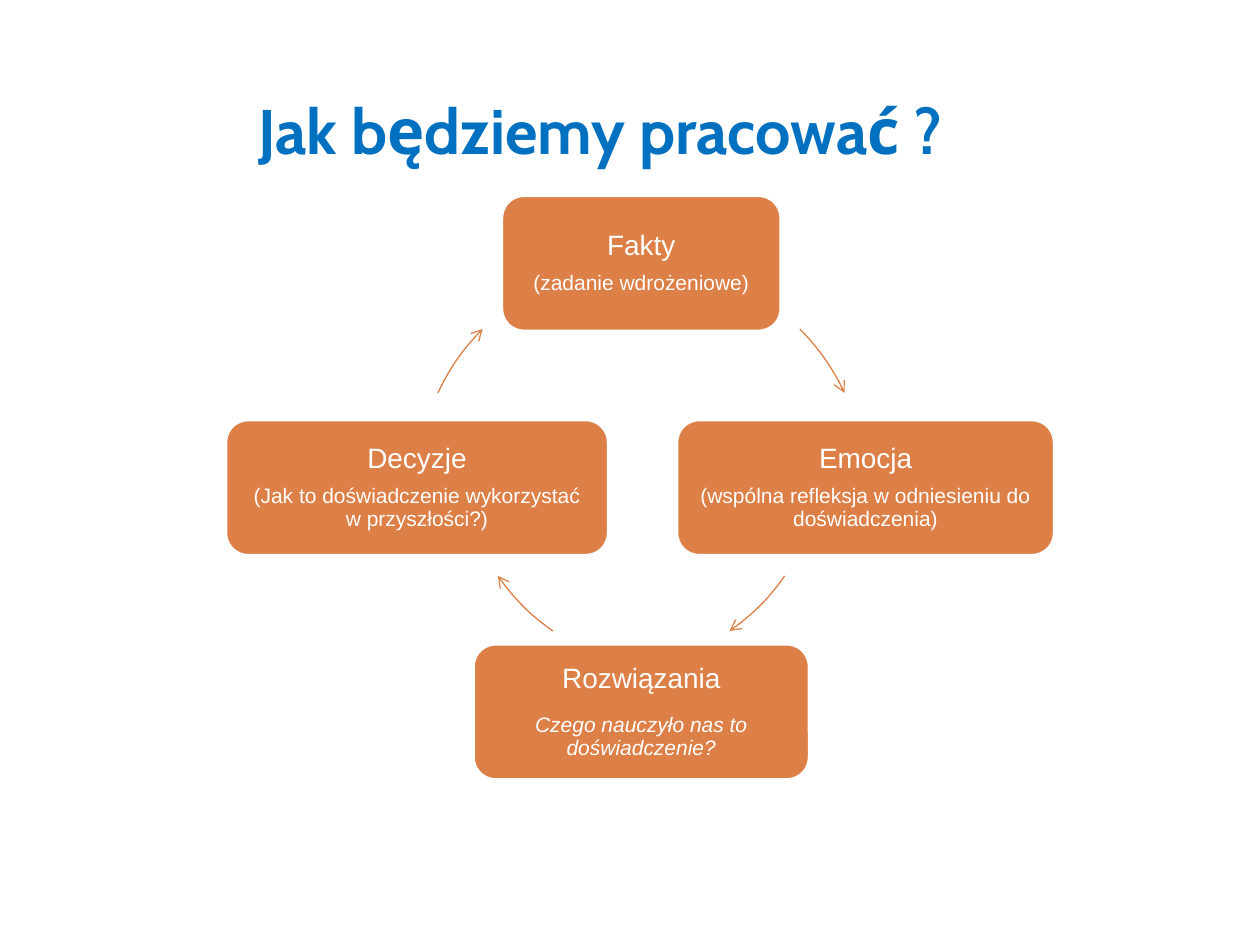
from dataclasses import dataclass
from lxml import etree
from pptx import Presentation, util as u
from pptx.dml.color import RGBColor
from pptx.enum import shapes, text
from pptx.oxml.ns import qn

COLUMNS, ROWS = 100, 75
HUB_X, HUB_Y, RADIUS = 50.9, 38.7, 17.8
NODE_HEIGHT = 10.8


def color(value):
    """Turn a hex string into a colour."""
    return RGBColor.from_string(value)


def write(paragraph, words, *, font, size, fill, bold=False, italic=False,
          spacing=None, before=None, after=None):
    """Write centred, formatted words into a paragraph."""
    paragraph.alignment = text.PP_ALIGN.CENTER
    paragraph.line_spacing = spacing
    if before:
        paragraph.space_before = u.Pt(before)
    paragraph.space_after = u.Pt(after or 0)
    run = paragraph.add_run()
    run.text = words
    run.font.name, run.font.size = font, u.Pt(size)
    run.font.bold, run.font.italic = bold, italic
    run.font.color.rgb = color(fill)


@dataclass
class CycleSlide:
    """Style and drawing methods for a cycle on the current slide."""
    presentation: object
    slide: object
    accent: str = "DD8047"
    light: str = "FFFFFF"
    title_color: str = "0070C0"
    title_font: str = "Cabin"
    body_font: str = "Arial"

    def place(self, left, top, width, height):
        """Convert grid columns and rows to slide lengths."""
        column = self.presentation.slide_width / COLUMNS
        row = self.presentation.slide_height / ROWS
        return (round(left * column), round(top * row),
                round(width * column), round(height * row))

    def title(self, words, *area):
        """Add the slide title."""
        frame = self.slide.shapes.add_textbox(*self.place(*area)).text_frame
        frame.word_wrap = True
        write(frame.paragraphs[0], words, font=self.title_font, size=36,
              fill=self.title_color, bold=True)

    def node(self, heading, detail, across, down, width, **detail_format):
        """Add a rounded step at a direction from the hub."""
        left = HUB_X + across * RADIUS - width / 2
        top = HUB_Y + down * RADIUS - NODE_HEIGHT / 2
        shape = self.slide.shapes.add_shape(
            shapes.MSO_SHAPE.ROUNDED_RECTANGLE,
            *self.place(left, top, width, NODE_HEIGHT))
        shape.shadow.inherit = False
        shape.fill.solid()
        shape.fill.fore_color.rgb = color(self.accent)
        shape.line.color.rgb = color(self.light)
        shape.line.width = u.Pt(2)
        frame = shape.text_frame
        frame.word_wrap = True
        frame.vertical_anchor = text.MSO_ANCHOR.MIDDLE
        frame.margin_left = frame.margin_right = u.Inches(0.12)
        frame.margin_top = frame.margin_bottom = u.Inches(0.07)
        style = dict(font=self.body_font, fill=self.light, spacing=0.9)
        write(frame.paragraphs[0], heading, size=16, after=6.4, **style)
        write(frame.add_paragraph(), detail, size=12, **style, **detail_format)

    def arrow(self, start, end, shift_x=0, shift_y=0):
        """Add a clockwise arc arrow between two angles in degrees."""
        shape = self.slide.shapes.add_shape(
            shapes.MSO_SHAPE.ARC,
            *self.place(HUB_X + shift_x - RADIUS, HUB_Y + shift_y - RADIUS,
                        2 * RADIUS, 2 * RADIUS))
        shape.shadow.inherit = False
        shape.fill.background()
        shape.line.color.rgb = color(self.accent)
        shape.line.width = u.Pt(0.75)
        for index, angle in enumerate((start, end)):
            shape.adjustments[index] = angle * 0.6
        etree.SubElement(shape.line._get_or_add_ln(), qn("a:tailEnd"), type="arrow")


def main():
    """Build and save the slide."""
    presentation = Presentation()
    presentation.slide_width, presentation.slide_height = u.Inches(10), u.Inches(7.5)
    slide = presentation.slides.add_slide(presentation.slide_layouts[6])
    cycle = CycleSlide(presentation, slide)
    cycle.node("Fakty", "(zadanie wdrożeniowe)", 0, -1, 22.2)
    cycle.arrow(315, 335)
    cycle.node("Emocja", "(wspólna refleksja w odniesieniu do doświadczenia)", 1, 0, 30)
    cycle.arrow(35, 55, -3.2, -3.2)
    cycle.node("Rozwiązania", "Czego nauczyło nas to doświadczenie?", 0, 1, 26.7,
               italic=True, before=5)
    cycle.arrow(125, 145, 3.2, -3.2)
    cycle.node("Decyzje", "(Jak to doświadczenie wykorzystać w przyszłości?)", -1, 0, 30.4)
    cycle.arrow(205, 225)
    cycle.title("Jak będziemy pracować ?", 14.6, 6.8, 66.1, 7.1)
    presentation.save("out.pptx")


if __name__ == "__main__":
    main()
